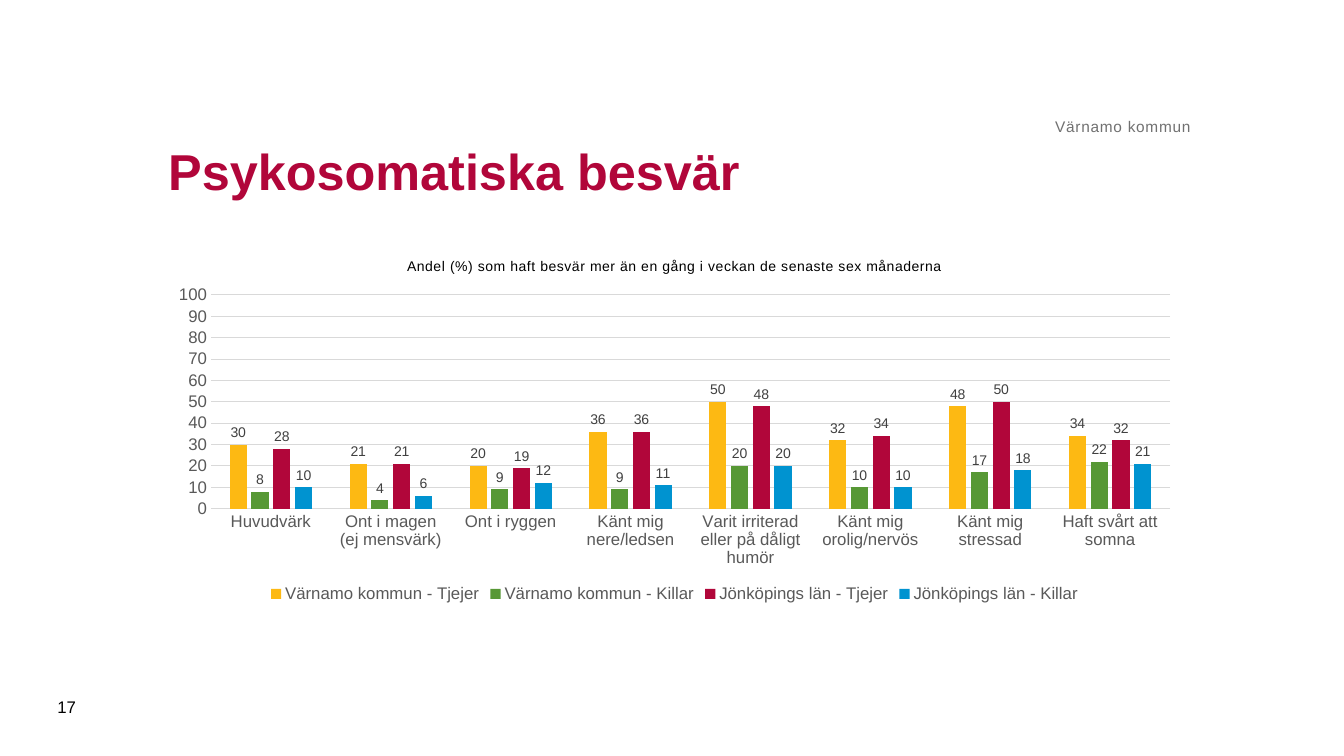
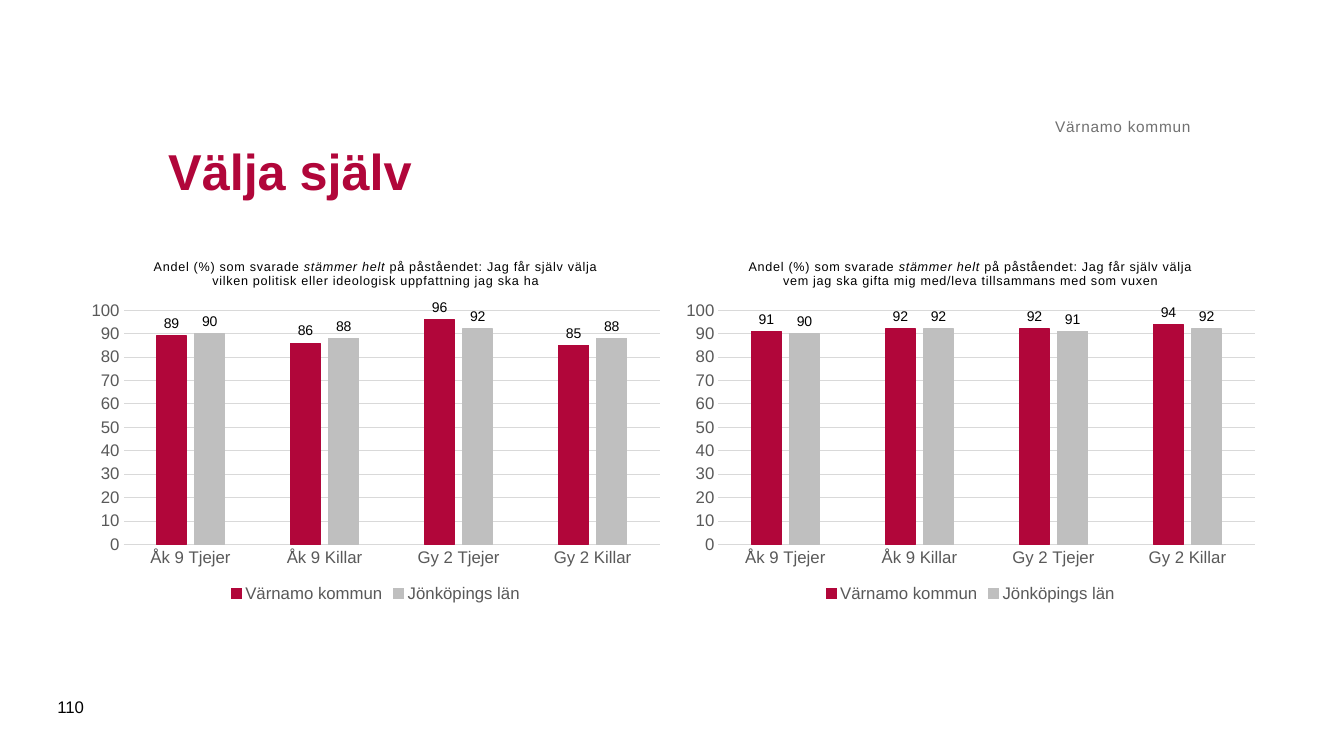
from pptx import Presentation
from pptx.chart.data import CategoryChartData
from pptx.dml.color import RGBColor
from pptx.enum.chart import XL_CHART_TYPE, XL_LABEL_POSITION, XL_LEGEND_POSITION, XL_TICK_MARK
from pptx.enum.text import MSO_ANCHOR, PP_ALIGN
from pptx.util import Inches, Pt

FONT = "Arial"
RED, YELLOW, GREEN, BLUE, SILVER = "B1063A", "FDB913", "579835", "0093D0", "BFBFBF"
BLACK, DARK, AXIS, GREY, GRID = "000000", "404040", "595959", "717171", "D9D9D9"
NUMBER_FORMAT = "#,##0;#,##0"

WIDTH, HEIGHT = 13.33, 7.5
BODY_LEFT, BODY_WIDTH = 1.57, 10.24
CHART_TOP, CHART_HEIGHT = 2.4, 3.62
PAIR_LEFT, PAIR_WIDTH, PAIR_GAP = 0.79, 5.87, 0.03

MUNICIPALITY, COUNTY = "Värnamo kommun", "Jönköpings län"
GROUPS = ["Åk 9 Tjejer", "Åk 9 Killar", "Gy 2 Tjejer", "Gy 2 Killar"]
STATEMENT = [("Andel (%) som svarade ", False), ("stämmer helt", True)]

# Each chart title is a list of (text, italic); each series is (name, colour, values).
SLIDES = [
    {
        "title": "Psykosomatiska besvär",
        "number": 17,
        "title_size": 10,
        "label_color": DARK,
        "outlined": False,
        "categories": [
            "Huvudvärk", "Ont i magen (ej mensvärk)", "Ont i ryggen", "Känt mig nere/ledsen",
            "Varit irriterad eller på dåligt humör", "Känt mig orolig/nervös",
            "Känt mig stressad", "Haft svårt att somna",
        ],
        "charts": [
            ([("Andel (%) som haft besvär mer än en gång i veckan de senaste sex månaderna", False)], [
                (f"{MUNICIPALITY} - Tjejer", YELLOW, [30, 21, 20, 36, 50, 32, 48, 34]),
                (f"{MUNICIPALITY} - Killar", GREEN, [8, 4, 9, 9, 20, 10, 17, 22]),
                (f"{COUNTY} - Tjejer", RED, [28, 21, 19, 36, 48, 34, 50, 32]),
                (f"{COUNTY} - Killar", BLUE, [10, 6, 12, 11, 20, 10, 18, 21]),
            ]),
        ],
    },
    {
        "title": "Välja själv",
        "number": 110,
        "title_size": 9,
        "label_color": BLACK,
        "outlined": True,
        "categories": GROUPS,
        "charts": [
            (STATEMENT + [(" på påståendet: Jag får själv välja vilken politisk eller "
                           "ideologisk uppfattning jag ska ha", False)], [
                (MUNICIPALITY, RED, [89, 86, 96, 85]),
                (COUNTY, SILVER, [90, 88, 92, 88]),
            ]),
            (STATEMENT + [(" på påståendet: Jag får själv välja vem jag ska gifta mig "
                           "med/leva tillsammans med som vuxen", False)], [
                (MUNICIPALITY, RED, [91, 92, 92, 94]),
                (COUNTY, SILVER, [90, 92, 91, 92]),
            ]),
        ],
    },
]


def rgb(color):
    return RGBColor.from_string(color)


def format_font(font, size, color, bold=False, italic=False):
    font.name, font.size, font.bold, font.italic = FONT, Pt(size), bold, italic
    font.color.rgb = rgb(color)


def set_spacing(run, points):
    run.font._element.set("spc", str(int(points * 100)))


def add_text(slide, text, box, size, color, bold=False, align=PP_ALIGN.LEFT,
             anchor=MSO_ANCHOR.MIDDLE, spacing=0, inset=None):
    shape = slide.shapes.add_textbox(*map(Inches, box))
    frame = shape.text_frame
    frame.word_wrap, frame.vertical_anchor = True, anchor
    if inset is not None:
        frame.margin_left = frame.margin_right = Inches(inset)
        frame.margin_top = frame.margin_bottom = Inches(inset)
    paragraph = frame.paragraphs[0]
    paragraph.alignment = align
    run = paragraph.add_run()
    run.text = text
    format_font(run.font, size, color, bold)
    if spacing:
        set_spacing(run, spacing)


def set_line(line, color):
    line.color.rgb = rgb(color)
    line.width = Pt(0.75)


def style_axes(chart):
    for axis in (chart.category_axis, chart.value_axis):
        axis.major_tick_mark = axis.minor_tick_mark = XL_TICK_MARK.NONE
        format_font(axis.tick_labels.font, 12, AXIS)
    set_line(chart.category_axis.format.line, GRID)
    values = chart.value_axis
    values.minimum_scale, values.maximum_scale, values.major_unit = 0, 100, 10
    values.tick_labels.number_format = NUMBER_FORMAT
    values.tick_labels.number_format_is_linked = False
    values.format.line.fill.background()
    set_line(values.major_gridlines.format.line, GRID)


def style_series(series, color, label_color, outlined):
    series.format.fill.solid()
    series.format.fill.fore_color.rgb = rgb(color)
    if outlined:
        set_line(series.format.line, color)
    labels = series.data_labels
    labels.show_value = True
    labels.position = XL_LABEL_POSITION.OUTSIDE_END
    labels.number_format, labels.number_format_is_linked = NUMBER_FORMAT, False
    format_font(labels.font, 10, label_color)


def add_column_chart(slide, content, title_runs, series_rows, left, width):
    data = CategoryChartData(number_format=NUMBER_FORMAT)
    data.categories = content["categories"]
    for name, _, values in series_rows:
        data.add_series(name, values)
    box = map(Inches, (left, CHART_TOP, width, CHART_HEIGHT))
    chart = slide.shapes.add_chart(XL_CHART_TYPE.COLUMN_CLUSTERED, *box, data).chart
    format_font(chart.font, 10, BLACK)

    paragraph = chart.chart_title.text_frame.paragraphs[0]
    format_font(paragraph.font, content["title_size"], BLACK)
    for text, italic in title_runs:
        run = paragraph.add_run()
        run.text = text
        format_font(run.font, content["title_size"], BLACK, italic=italic)
        set_spacing(run, 0.5)
    chart.chart_title.include_in_layout = False

    chart.has_legend = True
    chart.legend.position = XL_LEGEND_POSITION.BOTTOM
    chart.legend.include_in_layout = False
    format_font(chart.legend.font, 12, AXIS)

    style_axes(chart)
    plot = chart.plots[0]
    plot.gap_width, plot.overlap, plot.vary_by_categories = 219, -27, False
    for series, (_, color, _) in zip(plot.series, series_rows):
        style_series(series, color, content["label_color"], content["outlined"])


def add_slide(presentation, content):
    slide = presentation.slides.add_slide(presentation.slide_layouts[6])
    charts = content["charts"]
    left, width = (BODY_LEFT, BODY_WIDTH) if len(charts) == 1 else (PAIR_LEFT, PAIR_WIDTH)
    for column, (title_runs, series_rows) in enumerate(charts):
        add_column_chart(slide, content, title_runs, series_rows,
                         left + column * (width + PAIR_GAP), width)
    add_text(slide, content["title"], (BODY_LEFT, 0.98, BODY_WIDTH, 1.42), 36, RED, bold=True)
    add_text(slide, MUNICIPALITY, (BODY_LEFT, 0.62, BODY_WIDTH, 0.73), 11, GREY,
             align=PP_ALIGN.RIGHT, anchor=MSO_ANCHOR.BOTTOM, spacing=0.5, inset=0)
    add_text(slide, str(content["number"]), (0.47, 6.81, 0.57, 0.4), 12, BLACK)


def main():
    presentation = Presentation()
    presentation.slide_width, presentation.slide_height = Inches(WIDTH), Inches(HEIGHT)
    for content in SLIDES:
        add_slide(presentation, content)
    presentation.save("out.pptx")


if __name__ == "__main__":
    main()
